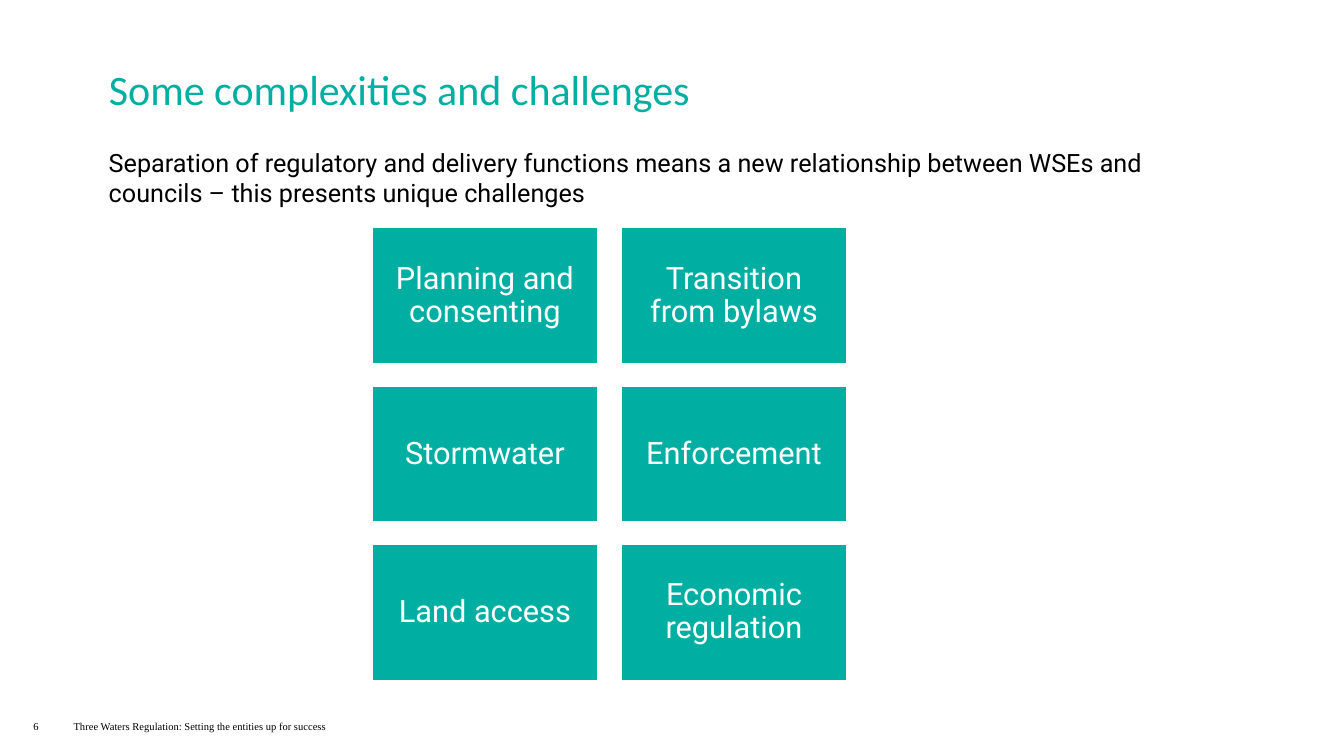
import pptx
import pptx.dml.color
import pptx.enum.shapes
import pptx.enum.text
import pptx.util

Inches = pptx.util.Inches
Pt = pptx.util.Pt
RGBColor = pptx.dml.color.RGBColor
Align = pptx.enum.text.PP_ALIGN

TEAL = RGBColor(0x00, 0xAF, 0xA2)
WHITE = RGBColor(0xFF, 0xFF, 0xFF)
BLACK = RGBColor(0x00, 0x00, 0x00)

CONTENT_LEFT = 0.98
FOOTER_TOP, FOOTER_HEIGHT = 7.09, 0.23
GRID_LEFT, GRID_TOP, GRID_COLUMNS = 3.69, 2.26, 2
CARD_WIDTH, CARD_HEIGHT = 2.24, 1.35
COLUMN_STEP, ROW_STEP = 2.47, 1.57

CHALLENGES = [
    "Planning and consenting", "Transition from bylaws",
    "Stormwater", "Enforcement",
    "Land access", "Economic regulation",
]


def write_text(shape, text, font_name, size, color, align=Align.LEFT,
               line_spacing=1.0, anchor=pptx.enum.text.MSO_ANCHOR.MIDDLE,
               margins=(0.1, 0.05)):
    """Write one formatted paragraph into a shape."""
    frame = shape.text_frame
    frame.word_wrap = True
    frame.auto_size = pptx.enum.text.MSO_AUTO_SIZE.NONE
    frame.vertical_anchor = anchor
    frame.margin_left = frame.margin_right = Inches(margins[0])
    frame.margin_top = frame.margin_bottom = Inches(margins[1])
    paragraph = frame.paragraphs[0]
    paragraph.alignment = align
    paragraph.line_spacing = line_spacing
    run = paragraph.add_run()
    run.text = text
    run.font.name = font_name
    run.font.size = Pt(size)
    run.font.color.rgb = color


def add_title(slide, text):
    """Place and format the title placeholder."""
    title = slide.shapes.title
    title.left, title.top = Inches(CONTENT_LEFT), Inches(0.63)
    title.width, title.height = Inches(10.13), Inches(0.56)
    write_text(title, text, "Calibri", 30, TEAL, line_spacing=0.9)


def add_introduction(slide, text):
    """Add the sentence that introduces the challenges."""
    box = slide.shapes.add_textbox(
        Inches(CONTENT_LEFT), Inches(1.41), Inches(11.22), Inches(0.71))
    write_text(box, text, "Roboto", 18, BLACK,
               anchor=pptx.enum.text.MSO_ANCHOR.TOP)


def add_footer(slide, left, width, text):
    """Add a small text at the foot of the slide."""
    box = slide.shapes.add_textbox(
        Inches(left), Inches(FOOTER_TOP), Inches(width), Inches(FOOTER_HEIGHT))
    write_text(box, text, "Times New Roman", 7.5, BLACK, margins=(0, 0.05))


def add_card(slide, column, row, text):
    """Add one challenge card at a cell of the grid."""
    card = slide.shapes.add_shape(
        pptx.enum.shapes.MSO_SHAPE.RECTANGLE,
        Inches(GRID_LEFT + column * COLUMN_STEP),
        Inches(GRID_TOP + row * ROW_STEP),
        Inches(CARD_WIDTH), Inches(CARD_HEIGHT))
    card.shadow.inherit = False
    card.fill.solid()
    card.fill.fore_color.rgb = TEAL
    card.line.color.rgb = WHITE
    card.line.width = Pt(1)
    write_text(card, text, "Roboto", 22, WHITE, align=Align.CENTER,
               line_spacing=0.9, margins=(0.09, 0.09))


def main():
    """Build the slide and save it."""
    presentation = pptx.Presentation()
    presentation.slide_width = Inches(13.33)
    presentation.slide_height = Inches(7.5)
    slide = presentation.slides.add_slide(presentation.slide_layouts[5])
    add_title(slide, "Some complexities and challenges")
    add_introduction(
        slide,
        "Separation of regulatory and delivery functions means a new "
        "relationship between WSEs and councils – this presents unique "
        "challenges")
    for index, challenge in enumerate(CHALLENGES):
        row, column = divmod(index, GRID_COLUMNS)
        add_card(slide, column, row, challenge)
    add_footer(slide, 0.33, 0.28, "6")
    add_footer(slide, 0.73, 4.5,
               "Three Waters Regulation: Setting the entities up for success")
    presentation.save("out.pptx")


if __name__ == "__main__":
    main()
